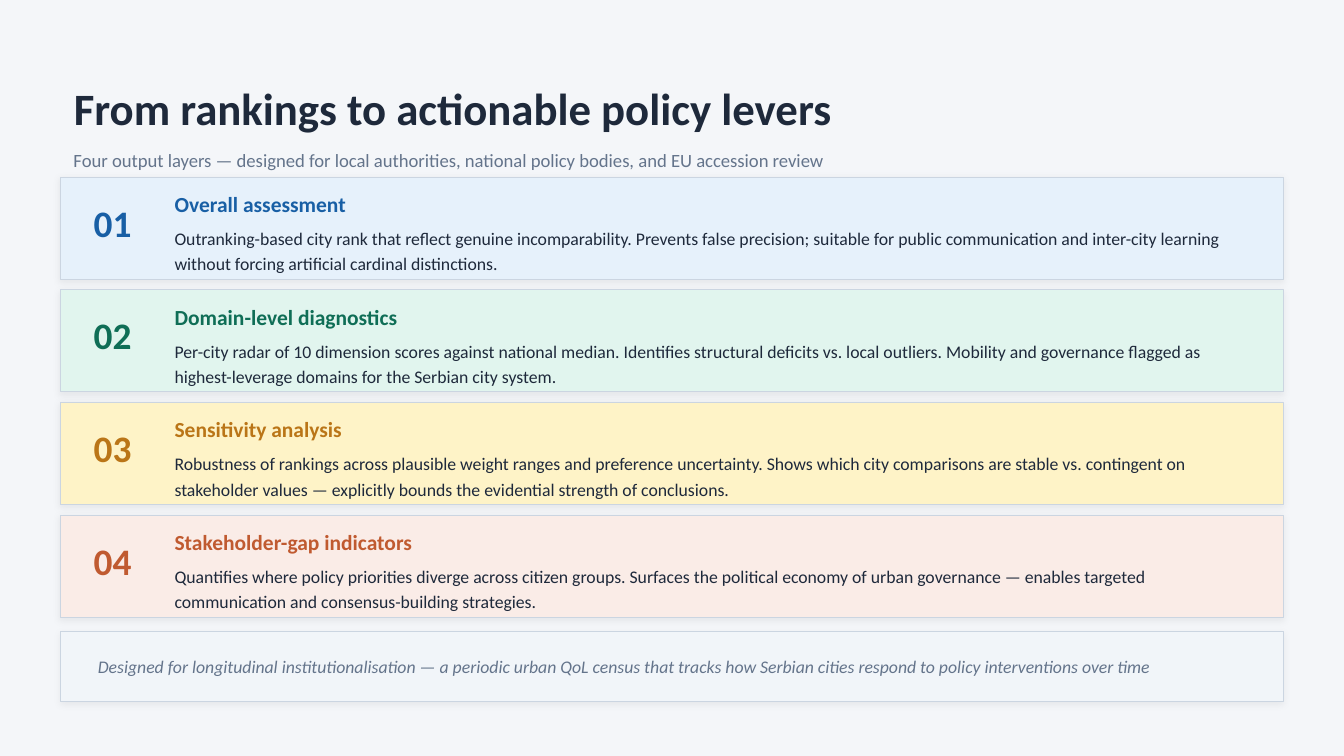
from lxml.etree import SubElement
from pptx import Presentation
from pptx.dml.color import RGBColor
from pptx.enum.shapes import MSO_SHAPE
from pptx.enum.text import MSO_ANCHOR, MSO_AUTO_SIZE, PP_ALIGN
from pptx.oxml.ns import qn
from pptx.util import Cm, Pt

INK, MUTED, BORDER = "1E293B", "64748B", "CBD5E1"
LEFT, WIDTH = 1.14, 23.11
FIRST_TOP, PITCH, CARD_HEIGHT = 3.35, 2.13, 1.93

LAYERS = [
    ("Overall assessment", "185FA5", "E6F1FB",
     "Outranking-based city rank that reflect genuine incomparability. Prevents false precision; "
     "suitable for public communication and inter-city learning without forcing artificial cardinal distinctions."),
    ("Domain-level diagnostics", "0F6E56", "E1F5EE",
     "Per-city radar of 10 dimension scores against national median. Identifies structural deficits "
     "vs. local outliers. Mobility and governance flagged as highest-leverage domains for the Serbian city system."),
    ("Sensitivity analysis", "BA7517", "FEF3C7",
     "Robustness of rankings across plausible weight ranges and preference uncertainty. Shows which city "
     "comparisons are stable vs. contingent on stakeholder values — explicitly bounds the evidential "
     "strength of conclusions."),
    ("Stakeholder-gap indicators", "C05A30", "FAECE7",
     "Quantifies where policy priorities diverge across citizen groups. Surfaces the political economy of "
     "urban governance — enables targeted communication and consensus-building strategies."),
]


def color(value):
    return RGBColor.from_string(value)


class Deck:
    """Hold the deck style and the current slide."""

    font_name = "Calibri"

    def __init__(self, width, height, background):
        self.presentation = Presentation()
        self.presentation.slide_width = Cm(width)
        self.presentation.slide_height = Cm(height)
        self.slide = self.presentation.slides.add_slide(self.presentation.slide_layouts[5])
        self.slide.background.fill.solid()
        self.slide.background.fill.fore_color.rgb = color(background)

    def set_wording(self, holder, wording, size, ink, bold=False, italic=False, spacing=None):
        frame = holder.text_frame
        frame.text = wording
        frame.word_wrap = True
        frame.auto_size = MSO_AUTO_SIZE.NONE
        frame.vertical_anchor = MSO_ANCHOR.MIDDLE
        paragraph = frame.paragraphs[0]
        paragraph.alignment = PP_ALIGN.LEFT
        paragraph.line_spacing = spacing
        font = paragraph.font
        font.name, font.size = self.font_name, Pt(size)
        font.bold, font.italic = bold, italic
        font.color.rgb = color(ink)

    def title(self, left, top, width, height, wording, size):
        heading = self.slide.shapes.title
        heading.left, heading.top = Cm(left), Cm(top)
        heading.width, heading.height = Cm(width), Cm(height)
        self.set_wording(heading, wording, size, INK, bold=True)

    def text(self, left, top, width, height, wording, size, ink, **style):
        box = self.slide.shapes.add_textbox(Cm(left), Cm(top), Cm(width), Cm(height))
        self.set_wording(box, wording, size, ink, **style)

    def card(self, top, height, fill):
        panel = self.slide.shapes.add_shape(
            MSO_SHAPE.RECTANGLE, Cm(LEFT), Cm(top), Cm(WIDTH), Cm(height))
        panel.fill.solid()
        panel.fill.fore_color.rgb = color(fill)
        panel.line.color.rgb = color(BORDER)
        panel.line.width = Pt(0.5)
        panel.shadow.inherit = False
        effects = panel._element.spPr.find(qn("a:effectLst"))
        shadow = SubElement(effects, qn("a:outerShdw"), blurRad=str(Pt(4)), dist=str(Pt(1)),
                            dir=str(135 * 60000), algn="bl", rotWithShape="0")
        tint = SubElement(shadow, qn("a:srgbClr"), val="000000")
        SubElement(tint, qn("a:alpha"), val="6000")

    def layer(self, number, top, name, accent, fill, detail):
        self.card(top, CARD_HEIGHT, fill)
        self.text(1.52, top + 0.15, 1.4, 1.4, f"{number:02}", 20, accent, bold=True)
        self.text(3.05, top + 0.15, 7.11, 0.71, name, 11.5, accent, bold=True)
        self.text(3.05, top + 0.91, 20.7, 0.89, detail, 9.5, INK, spacing=1.2)


def main():
    deck = Deck(25.4, 14.29, "F4F6F9")
    deck.title(LEFT, 1.4, WIDTH, 1.27, "From rankings to actionable policy levers", 24)
    deck.text(LEFT, 2.67, WIDTH, 0.71,
              "Four output layers — designed for local authorities, national policy bodies, "
              "and EU accession review", 10, MUTED)
    for index, layer in enumerate(LAYERS):
        deck.layer(index + 1, FIRST_TOP + index * PITCH, *layer)
    deck.card(11.94, 1.32, "F1F5F9")
    deck.text(1.6, 12.09, 22.35, 1.02,
              "Designed for longitudinal institutionalisation — a periodic urban QoL census that "
              "tracks how Serbian cities respond to policy interventions over time",
              9.5, MUTED, italic=True)
    deck.presentation.save("out.pptx")


if __name__ == "__main__":
    main()
